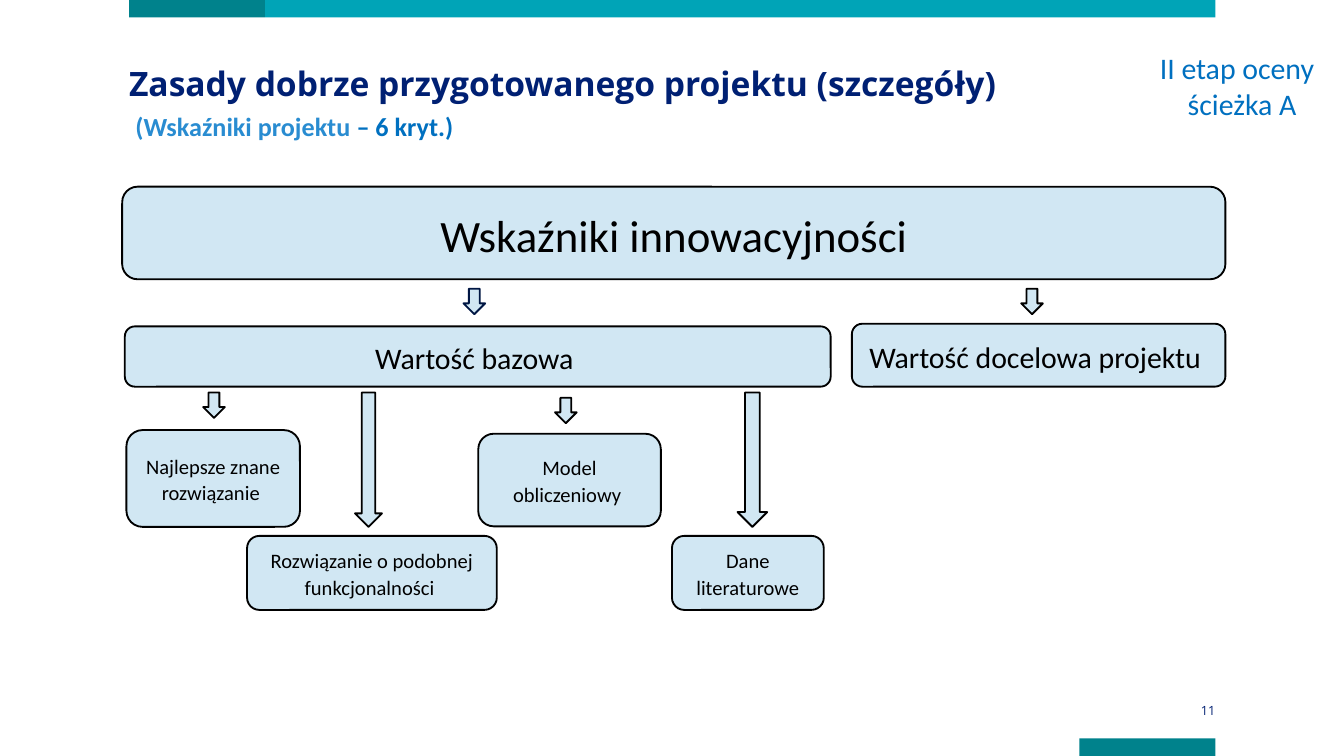
from pptx import Presentation
from pptx.dml.color import RGBColor
from pptx.enum.shapes import MSO_SHAPE
from pptx.enum.text import MSO_ANCHOR, PP_ALIGN
from pptx.util import Cm, Pt

RECTANGLE = MSO_SHAPE.RECTANGLE
ROUNDED = MSO_SHAPE.ROUNDED_RECTANGLE
DOWN_ARROW = MSO_SHAPE.DOWN_ARROW
MIDDLE = MSO_ANCHOR.MIDDLE
LEFT, CENTER, RIGHT = PP_ALIGN.LEFT, PP_ALIGN.CENTER, PP_ALIGN.RIGHT

DARK_TEAL = RGBColor(0x00, 0x82, 0x8C)
TEAL = RGBColor(0x00, 0xA4, 0xB7)
NAVY = RGBColor(0x00, 0x20, 0x73)
DEEP_NAVY = RGBColor(0x00, 0x16, 0x43)
PALE_BLUE = RGBColor(0xD1, 0xE7, 0xF3)
SKY_BLUE = RGBColor(0x29, 0x8C, 0xD1)
BLUE = RGBColor(0x00, 0x70, 0xC0)
BLACK = RGBColor(0x00, 0x00, 0x00)

PAGE_WIDTH, PAGE_HEIGHT = 25.4, 14.29
BODY_FONT, TITLE_FONT = "Calibri", "Open Sans"


def add_shape(page, kind, left, top, width, height, fill, outline=None):
    shape = page.shapes.add_shape(kind, Cm(left), Cm(top), Cm(width), Cm(height))
    shape.shadow.inherit = False
    shape.fill.solid()
    shape.fill.fore_color.rgb = fill
    if outline is None:
        shape.line.fill.background()
    else:
        shape.line.color.rgb = outline
        shape.line.width = Pt(1)
    return shape


def add_text_box(page, left, top, width, height):
    frame = page.shapes.add_textbox(Cm(left), Cm(top), Cm(width), Cm(height)).text_frame
    frame.word_wrap = True
    return frame


def style(span, font, size, color, bold=False):
    span.font.name = font
    span.font.size = Pt(size)
    span.font.color.rgb = color
    span.font.bold = bold


def add_label(page, left, top, width, height, text, size):
    shape = add_shape(page, ROUNDED, left, top, width, height, PALE_BLUE, BLACK)
    frame = shape.text_frame
    frame.word_wrap = True
    frame.vertical_anchor = MIDDLE
    frame.text = text
    para = frame.paragraphs[0]
    para.alignment = CENTER
    para.line_spacing = 1.07
    para.space_after = Pt(8)
    style(para.runs[0], BODY_FONT, size, BLACK)


def draw_frame(page, left, top, width, height):
    bar, block = 0.33, 2.57
    corner = left + width - block
    add_shape(page, RECTANGLE, left, top, block, bar, DARK_TEAL)
    add_shape(page, RECTANGLE, left + block, top, width - block, bar, TEAL)
    add_shape(page, RECTANGLE, corner, top + height - bar, block, bar, DARK_TEAL)

    frame = add_text_box(page, corner, top + height - 1.03, block, bar)
    frame.margin_left = frame.margin_right = 0
    frame.margin_top = frame.margin_bottom = Cm(0.2)
    frame.vertical_anchor = MIDDLE
    frame.text = "11"
    para = frame.paragraphs[0]
    para.alignment = RIGHT
    style(para.runs[0], TITLE_FONT, 6.8, NAVY)


def draw_header(page, left, top, width):
    title = add_text_box(page, left + 0.13, top + 0.18, 20.07, 1.14)
    title.margin_left = title.margin_right = 0
    title.margin_top = title.margin_bottom = 0
    title.text = "Zasady dobrze przygotowanego projektu (szczegóły)"
    title.paragraphs[0].line_spacing = Pt(27)
    style(title.paragraphs[0].runs[0], TITLE_FONT, 18, NAVY, True)

    stage = add_text_box(page, left + width - 3.61, top, 3.61, 1.63)
    stage.text = "II etap oceny\nścieżka A"
    for para, alignment in zip(stage.paragraphs, (LEFT, CENTER)):
        para.alignment = alignment
        style(para.runs[0], BODY_FONT, 16, BLUE)

    subtitle = add_text_box(page, left, top + 1.15, 7.19, 0.86)
    for text, color in (("(Wskaźniki projektu ", SKY_BLUE), ("– 6 kryt.)", BLUE)):
        span = subtitle.paragraphs[0].add_run()
        span.text = text
        style(span, BODY_FONT, 14, color, True)


def draw_diagram(page, left, top, width):
    labels = (
        (0, 0, width, 1.75, "Wskaźniki innowacyjności", 24),
        (0.05, 2.64, 13.34, 1.14, "Wartość bazowa ", 16),
        (width - 7.06, 2.59, 7.06, 1.19, "Wartość docelowa projektu ", 16),
        (0.08, 4.6, 3.28, 1.83, "Najlepsze znane rozwiązanie ", 11),
        (6.73, 4.67, 3.45, 1.75, "Model obliczeniowy ", 11),
        (10.39, 6.6, 2.87, 1.4, "Dane literaturowe", 11),
        (2.36, 6.6, 4.72, 1.4, "Rozwiązanie o podobnej funkcjonalności ", 11),
    )
    for x, y, label_width, label_height, text, size in labels:
        add_label(page, left + x, top + y, label_width, label_height, text, size)

    short, long = 0.48, 2.54
    arrows = (
        (6.45, 1.93, 0.41, short, DEEP_NAVY),
        (16.99, 1.93, 0.41, short, BLACK),
        (1.53, 3.89, 0.41, short, BLACK),
        (4.4, 3.89, 0.51, long, BLACK),
        (8.18, 3.99, 0.41, short, BLACK),
        (11.63, 3.89, 0.56, long, BLACK),
    )
    for x, y, arrow_width, arrow_height, outline in arrows:
        add_shape(page, DOWN_ARROW, left + x, top + y, arrow_width, arrow_height,
                  PALE_BLUE, outline)


def main():
    deck = Presentation()
    deck.slide_width, deck.slide_height = Cm(PAGE_WIDTH), Cm(PAGE_HEIGHT)
    page = deck.slides.add_slide(deck.slide_layouts[6])
    draw_frame(page, 2.44, 0, 20.53, PAGE_HEIGHT)
    draw_header(page, 2.31, 0.81, 22.97)
    draw_diagram(page, 2.31, 3.53, 20.85)
    deck.save("out.pptx")


if __name__ == "__main__":
    main()
